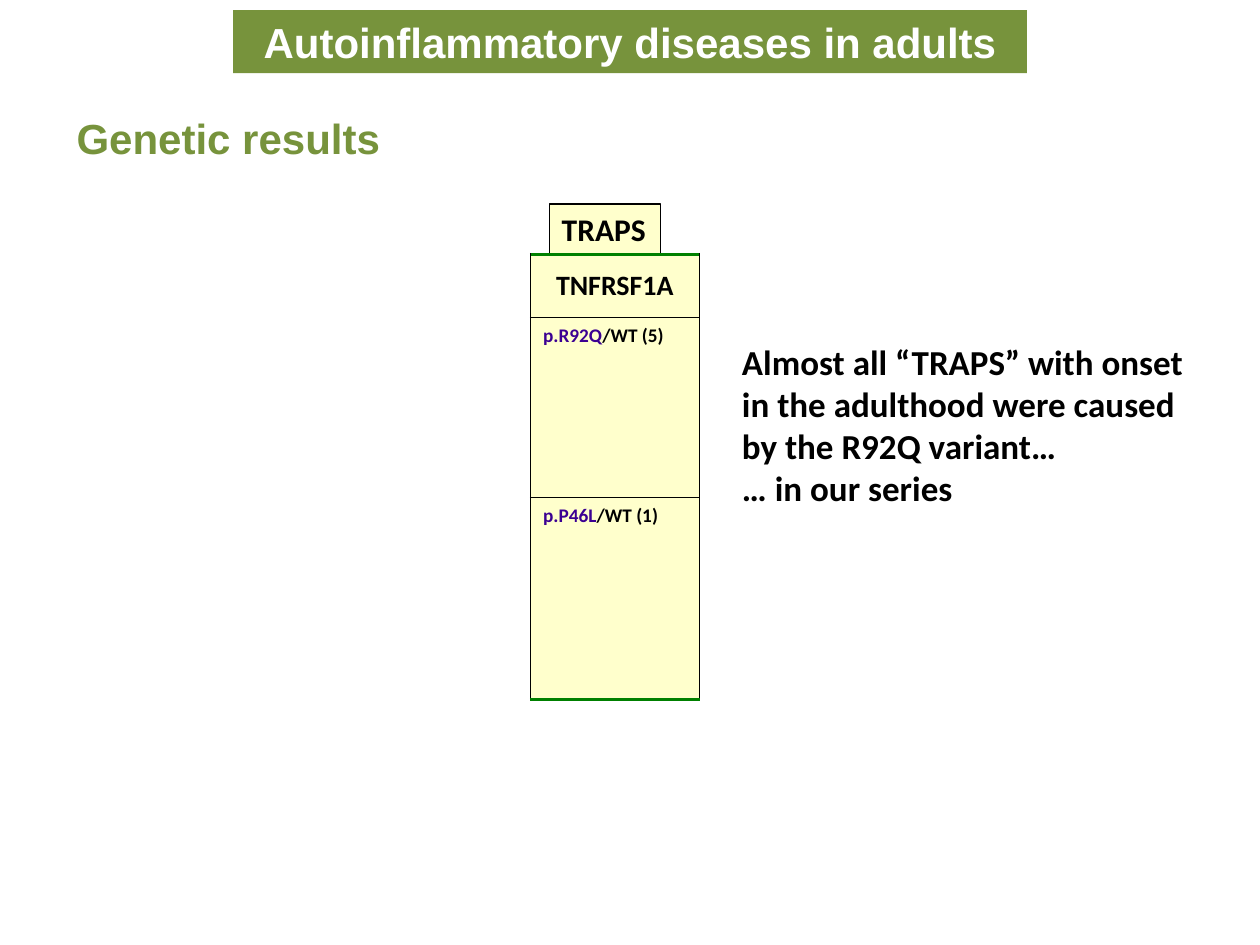
import pptx
import pptx.util
import pptx.dml.color
import pptx.enum.shapes
import pptx.enum.text
import pptx.oxml
import pptx.oxml.ns
from pptx.util import Inches

GREEN, CREAM, BLACK, PURPLE = "77933C", "FFFFCC", "000000", "3B0092"
PP_ALIGN = pptx.enum.text.PP_ALIGN
MSO_ANCHOR = pptx.enum.text.MSO_ANCHOR


def rgb(hex_color):
    return pptx.dml.color.RGBColor.from_string(hex_color)


def style(p, size, color, font="Calibri"):
    for r in p.runs:
        r.font.size = pptx.util.Pt(size)
        r.font.name = font
        r.font.bold = True
        r.font.color.rgb = rgb(color)


prs = pptx.Presentation()
prs.slide_width, prs.slide_height = Inches(10), Inches(7.5)
s = prs.slides.add_slide(prs.slide_layouts[5])

# Title banner
title = s.shapes.title
title.left, title.top = Inches(1.85), Inches(0.08)
title.width, title.height = Inches(6.3), Inches(0.5)
title.fill.solid()
title.fill.fore_color.rgb = rgb(GREEN)
tf = title.text_frame
tf.text = "Autoinflammatory diseases in adults"
tf.auto_size = pptx.enum.text.MSO_AUTO_SIZE.NONE
tf.vertical_anchor = MSO_ANCHOR.MIDDLE
tf.paragraphs[0].alignment = PP_ALIGN.CENTER
style(tf.paragraphs[0], 24, "FFFFFF", "Arial")

# Section heading and comment
comment = ("Almost all “TRAPS” with onset in the adulthood were caused "
           "by the R92Q variant…\n… in our series")
for text, box, size, color, font in [
    ("Genetic results", (0.51, 0.84, 2.76, 0.5), 24, GREEN, "Arial"),
    (comment, (5.79, 2.65, 3.78, 1.45), 20, BLACK, "Calibri"),
]:
    tf = s.shapes.add_textbox(*[Inches(v) for v in box]).text_frame
    tf.word_wrap = True
    tf.text = text
    for p in tf.paragraphs:
        style(p, size, color, font)

# Disease label above the table
sp = s.shapes.add_shape(pptx.enum.shapes.MSO_SHAPE.RECTANGLE,
                        Inches(4.36), Inches(1.62), Inches(0.88), Inches(0.4))
sp.shadow.inherit = False
sp.fill.solid()
sp.fill.fore_color.rgb = rgb(CREAM)
sp.line.color.rgb = rgb(BLACK)
sp.line.width = pptx.util.Pt(0.75)
tf = sp.text_frame
tf.word_wrap = False
tf.text = "TRAPS"
style(tf.paragraphs[0], 18, BLACK)

# Gene table: a header, then one row per variant
rows = [(0.5, ["TNFRSF1A"]),
        (1.43, ["p.R92Q", "/WT (5)"]),
        (1.6, ["p.P46L", "/WT (1)"])]
table = s.shapes.add_table(len(rows), 1, Inches(4.21), Inches(2.02),
                           Inches(1.34), Inches(3.53)).table
for i, (height, parts) in enumerate(rows):
    table.rows[i].height = Inches(height)
    cell = table.cell(i, 0)
    p = cell.text_frame.paragraphs[0]
    for part in parts:
        p.add_run().text = part
    pPr = p._p.get_or_add_pPr()
    pPr.set("marL", str(Inches(0.38)))
    pPr.set("indent", str(-Inches(0.38)))
    if i == 0:
        cell.vertical_anchor = MSO_ANCHOR.MIDDLE
        p.alignment = PP_ALIGN.CENTER
        style(p, 16, BLACK)
    else:
        style(p, 11, BLACK)
        p.runs[0].font.color.rgb = rgb(PURPLE)

    # Thin black borders, thick green at the table's top and bottom
    thick = {"T": i == 0, "B": i == len(rows) - 1}
    tcPr = cell._tc.get_or_add_tcPr()
    for side in "LRTB":
        color, width = ("008000", 2) if thick.get(side) else (BLACK, 0.75)
        tcPr.append(pptx.oxml.parse_xml(
            f'<a:ln{side} {pptx.oxml.ns.nsdecls("a")} w="{pptx.util.Pt(width)}">'
            f'<a:solidFill><a:srgbClr val="{color}"/></a:solidFill></a:ln{side}>'))
    cell.fill.solid()
    cell.fill.fore_color.rgb = rgb(CREAM)

prs.save("out.pptx")
